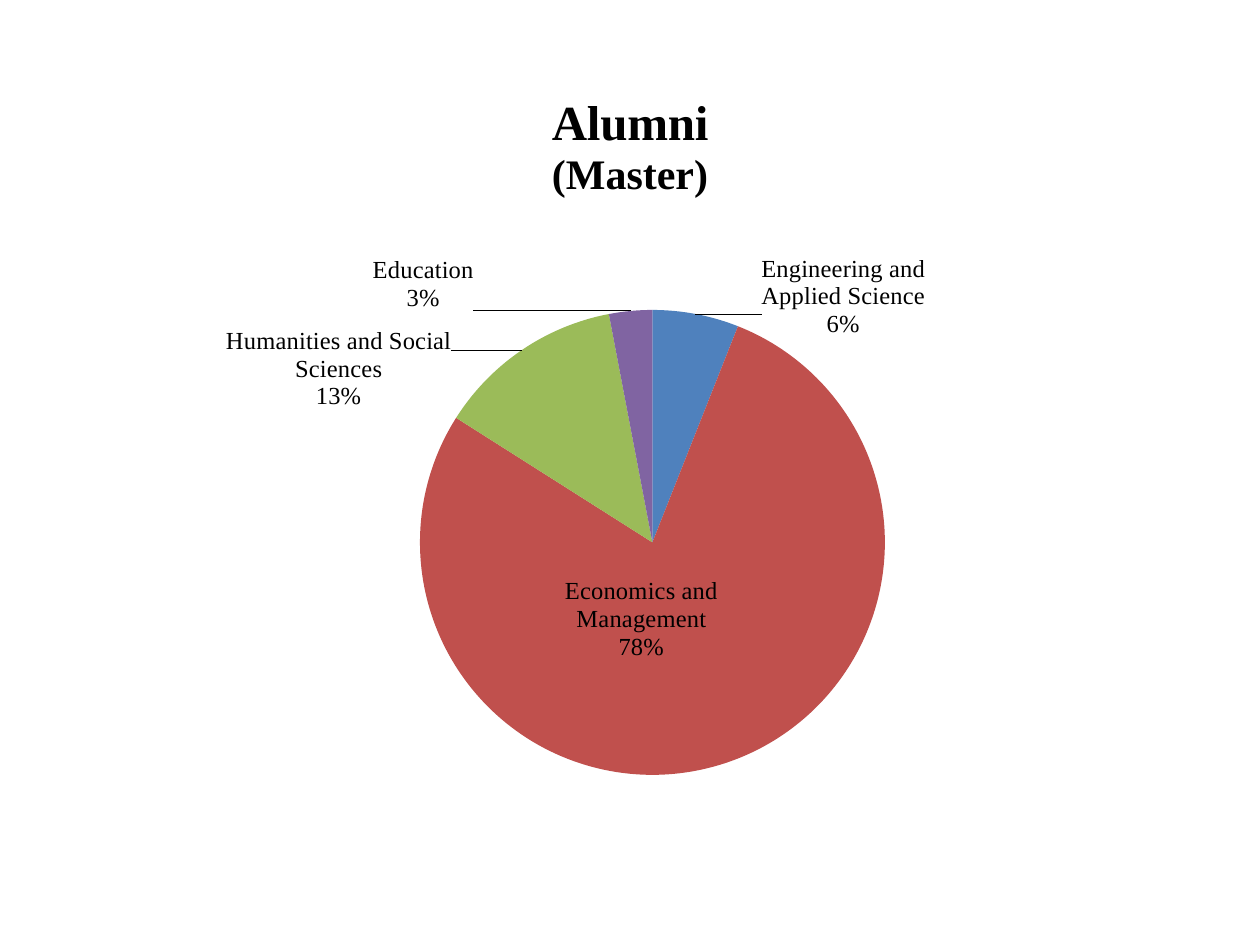
from pptx import Presentation
from pptx.chart.data import CategoryChartData
from pptx.dml.color import RGBColor
from pptx.enum.chart import XL_CHART_TYPE as ChartType, XL_LABEL_POSITION as LabelPosition
from pptx.oxml import parse_xml
from pptx.oxml.ns import nsdecls, qn
from pptx.util import Emu, Pt

PX = 914400 // 126
FRAME = (63, 69, 1134, 808)
OUTSIDE, CENTER, BEST_FIT = LabelPosition.OUTSIDE_END, LabelPosition.CENTER, LabelPosition.BEST_FIT

# category, value, colour, label position, label shift in px
SLICES = [
    ("Engineering and Applied Science", 6, "4F81BD", OUTSIDE, (64, 31)),
    ("Economics and Management", 78, "C0504D", CENTER, (-47, -34)),
    ("Humanities and Social Sciences", 13, "9BBB59", BEST_FIT, (-66, 66)),
    ("Education", 3, "8064A2", OUTSIDE, (-156, 8)),
]
TITLE = [("Alumni", 28), ("(Master)", 24)]


def px(length):
    return Emu(length * PX)


def color(value):
    return RGBColor.from_string(value)


def set_layout(parent, index, head="", **parts):
    """Place a chart part by hand; x, y, w and h are px within the frame."""
    for old in parent.findall(qn("c:layout")):
        parent.remove(old)
    extent = {"x": FRAME[2], "w": FRAME[2], "y": FRAME[3], "h": FRAME[3]}
    values = "".join(f'<c:{key} val="{size / extent[key]:.4f}"/>' for key, size in parts.items())
    parent.insert(index, parse_xml(
        f'<c:layout {nsdecls("c")}><c:manualLayout>{head}{values}</c:manualLayout></c:layout>'))


def show_category_and_percent(labels):
    """Works on one label or on the labels of a whole series."""
    shown = {"c:showLegendKey": "0", "c:showVal": "0", "c:showCatName": "1",
             "c:showSerName": "0", "c:showPercent": "1", "c:showBubbleSize": "0",
             "c:showLeaderLines": "1"}
    last = None
    for tag, value in shown.items():
        child = labels.find(qn(tag))
        if child is not None:
            child.set("val", value)
            if tag != "c:showLeaderLines":
                last = child
    last.addnext(parse_xml(f'<c:separator {nsdecls("c")}>\n</c:separator>'))


class SlideBuilder:
    font_name = "Times New Roman"
    text_color = "000000"
    label_size = 14
    from_edge = '<c:xMode val="edge"/><c:yMode val="edge"/>'

    def __init__(self, deck):
        self.page = deck.slides.add_slide(deck.slide_layouts[6])

    def style(self, font, size, bold=False):
        font.name, font.size, font.bold = self.font_name, Pt(size), bold
        font.color.rgb = color(self.text_color)

    def pie(self, slices, frame):
        data = CategoryChartData()
        data.categories = [name for name, *_ in slices]
        data.add_series("Series 1", [value for _, value, *_ in slices])
        chart = self.page.shapes.add_chart(ChartType.PIE, *map(px, frame), data).chart
        chart.has_legend = False
        chart.font.name, chart.font.size = "Calibri", Pt(10)
        chart.font.color.rgb = color(self.text_color)
        plot = chart.plots[0]
        plot.vary_by_categories = True
        series = plot.series[0]
        self.style(series.data_labels.font, self.label_size)
        show_category_and_percent(series.data_labels._element)
        for index, (_, _, fill, position, _) in enumerate(slices):
            point = series.points[index]
            point.format.fill.solid()
            point.format.fill.fore_color.rgb = color(fill)
            self.style(point.data_label.font, self.label_size)
            point.data_label.position = position
        for label, (*_, (x, y)) in zip(series.data_labels._element.findall(qn("c:dLbl")), slices):
            show_category_and_percent(label)
            set_layout(label, 1, x=x, y=y)
        set_layout(chart._chartSpace.chart.plotArea, 0,
                   '<c:layoutTarget val="inner"/>' + self.from_edge, x=357, y=241, w=465, h=465)
        return chart

    def chart_title(self, chart, lines):
        frame = chart.chart_title.text_frame
        for index, (text, size) in enumerate(lines):
            para = frame.paragraphs[0] if index == 0 else frame.add_paragraph()
            span = para.add_run()
            span.text = text
            for font in (para.font, span.font):
                self.style(font, size, bold=True)
        set_layout(chart.chart_title._element, 1, self.from_edge, x=485, y=22)


def main():
    deck = Presentation()
    deck.slide_width, deck.slide_height = px(1260), px(945)
    builder = SlideBuilder(deck)
    chart = builder.pie(SLICES, FRAME)
    builder.chart_title(chart, TITLE)
    deck.save("out.pptx")


if __name__ == "__main__":
    main()
